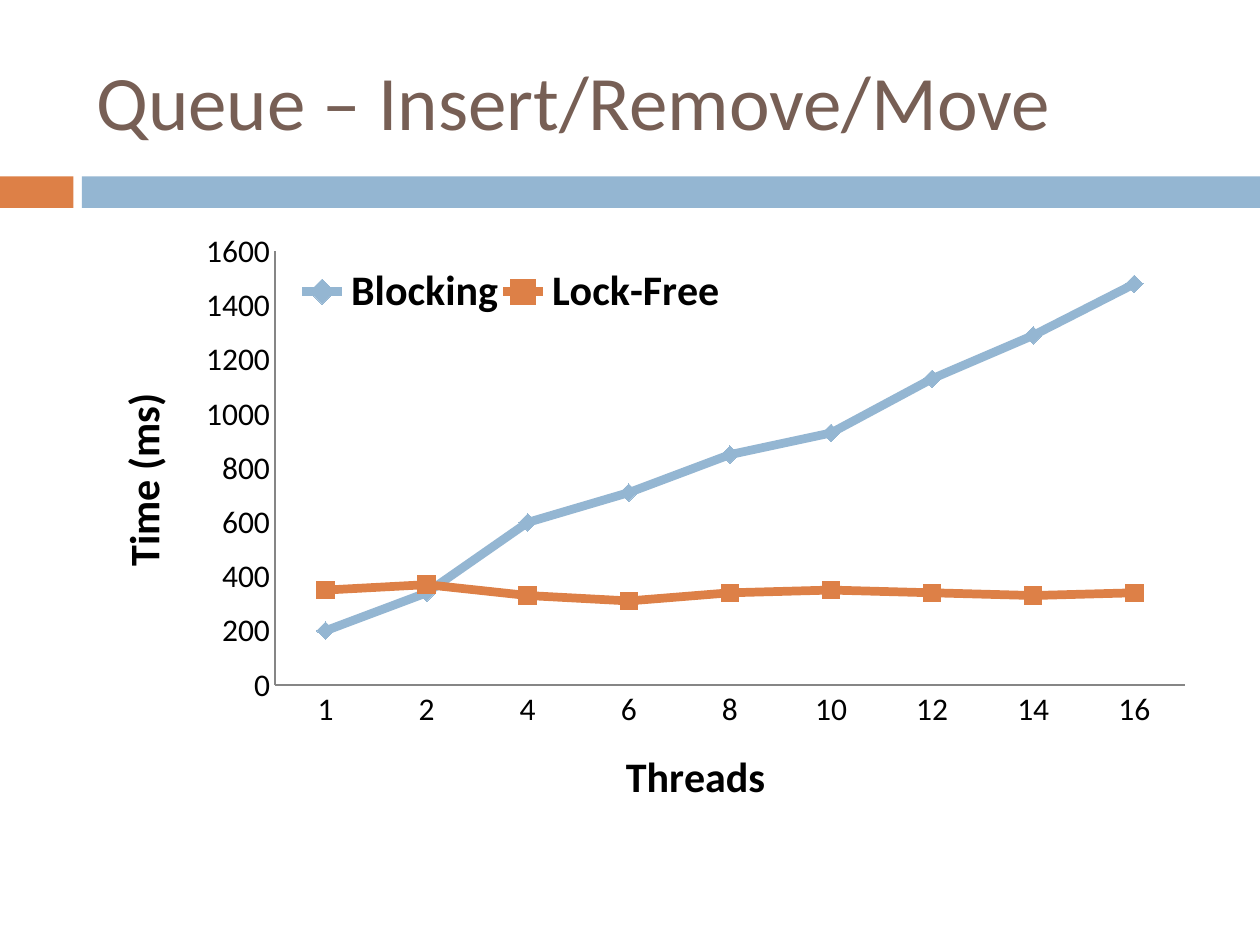
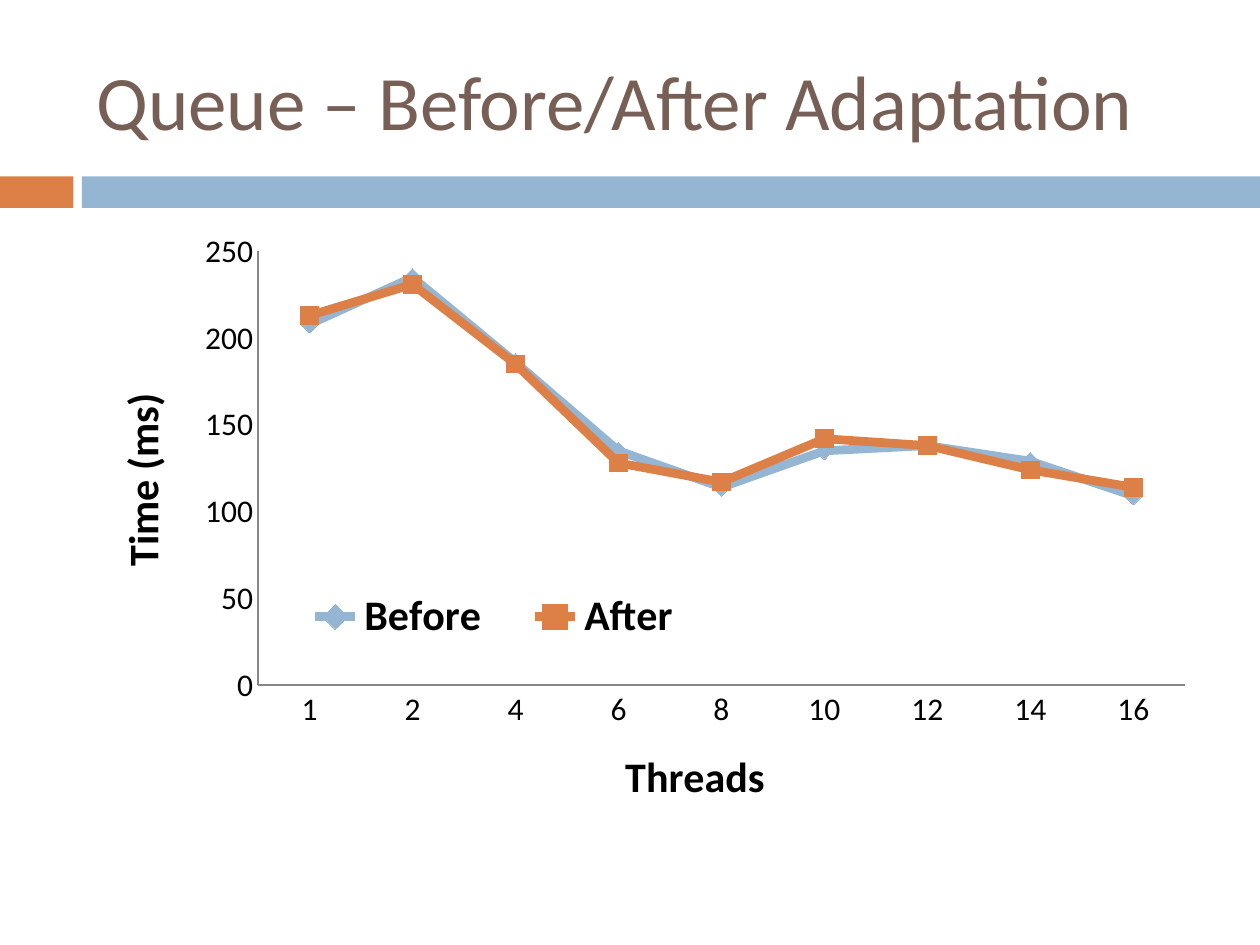
"""Build two slides of line charts that compare queue timings by thread count."""
from lxml import etree
from pptx import Presentation
from pptx.chart.data import CategoryChartData
from pptx.dml.color import RGBColor
from pptx.enum.chart import XL_CHART_TYPE, XL_LEGEND_POSITION, XL_MARKER_STYLE, XL_TICK_MARK
from pptx.enum.shapes import MSO_SHAPE
from pptx.enum.text import MSO_ANCHOR
from pptx.oxml.ns import qn
from pptx.util import Pt

LINE_MARKERS = XL_CHART_TYPE.LINE_MARKERS
LEGEND_RIGHT = XL_LEGEND_POSITION.RIGHT
DIAMOND, SQUARE = XL_MARKER_STYLE.DIAMOND, XL_MARKER_STYLE.SQUARE
NO_TICK = XL_TICK_MARK.NONE
RECTANGLE = MSO_SHAPE.RECTANGLE
MIDDLE = MSO_ANCHOR.MIDDLE

ORANGE = RGBColor(0xDD, 0x80, 0x47)
BLUE = RGBColor(0x94, 0xB6, 0xD2)
BROWN = RGBColor(0x77, 0x5F, 0x55)
BLACK = RGBColor(0, 0, 0)
GREY = RGBColor(0x86, 0x86, 0x86)

FONT = "Calibri"
TITLE_FORMAT = {"name": FONT, "size": Pt(44), "bold": False}
LABEL_FORMAT = {"name": FONT, "size": Pt(18), "bold": False}
HEADING_FORMAT = {"name": FONT, "size": Pt(24), "bold": True}
AXIS_FORMAT = {"major_tick_mark": NO_TICK, "minor_tick_mark": NO_TICK,
               "has_major_gridlines": False}
SERIES_LOOKS = [(BLUE, DIAMOND), (ORANGE, SQUARE)]

SLIDE_WIDTH, SLIDE_HEIGHT = 720, 540
TITLE_BOX = (48, 18, 642, 78)
BAND_BOX = (0, 100.8, SLIDE_WIDTH, 18)
CHART_BOX = (48, 126, 642, 354)

THREADS = ["1", "2", "4", "6", "8", "10", "12", "14", "16"]
SLIDES = [
    {
        "title": "Queue – Insert/Remove/Move",
        "timings": {
            "Blocking": [200, 340, 600, 710, 850, 930, 1130, 1290, 1480],
            "Lock-Free": [350, 370, 330, 310, 340, 350, 340, 330, 340],
        },
        "scale": (1600, 200),
        "plot": (0.17, 0.05, 0.81, 0.7),
        "legend": (0.19, 0.07, 0.38, 0.09),
    },
    {
        "title": "Queue – Before/After Adaptation",
        "timings": {
            "Before": [208, 235, 186, 135, 114, 135, 138, 129, 109],
            "After": [213, 231, 185, 128, 117, 142, 138, 124, 114],
        },
        "scale": (250, 50),
        "plot": (0.155, 0.05, 0.825, 0.7),
        "legend": (0.17, 0.59, 0.39, 0.1),
    },
]


def apply_format(target, values):
    """Set each attribute named in a dict of format values."""
    for name, value in values.items():
        setattr(target, name, value)


def apply_font(font, values, color=BLACK):
    """Set the format and colour of a font."""
    apply_format(font, values)
    font.color.rgb = color


def place_in_chart(element, index, fractions, inner=False):
    """Give a chart part a manual layout in fractions of the chart."""
    for old in element.findall(qn("c:layout")):
        element.remove(old)
    layout = etree.Element(qn("c:layout"))
    manual = etree.SubElement(layout, qn("c:manualLayout"))
    settings = [("layoutTarget", "inner")] if inner else []
    settings += [("xMode", "edge"), ("yMode", "edge")]
    settings += zip("xywh", map(str, fractions))
    for tag, value in settings:
        etree.SubElement(manual, qn(f"c:{tag}")).set("val", value)
    element.insert(index, layout)


def add_title(slide, box, text):
    """Write the slide title in its box."""
    frame = slide.shapes.add_textbox(*map(Pt, box)).text_frame
    apply_format(frame, {"word_wrap": True, "vertical_anchor": MIDDLE})
    run = frame.paragraphs[0].add_run()
    run.text = text
    apply_font(run.font, TITLE_FORMAT, BROWN)


def add_band(slide, box):
    """Draw the short orange and the long blue part of the band."""
    left, top, width, height = box
    accent, gap = 42, 4.8
    rest = accent + gap
    for offset, length, color in ((0, accent, ORANGE), (rest, width - rest, BLUE)):
        bar = slide.shapes.add_shape(
            RECTANGLE, Pt(left + offset), Pt(top), Pt(length), Pt(height))
        bar.shadow.inherit = False
        bar.fill.solid()
        bar.fill.fore_color.rgb = color
        bar.line.fill.background()


def style_axis(axis, heading):
    """Format an axis and write its heading."""
    apply_format(axis, AXIS_FORMAT)
    apply_font(axis.tick_labels.font, LABEL_FORMAT)
    axis.format.line.color.rgb = GREY
    axis.format.line.width = Pt(0.75)
    run = axis.axis_title.text_frame.paragraphs[0].add_run()
    run.text = heading
    apply_font(run.font, HEADING_FORMAT)


def style_series(series, color, marker_style):
    """Give a line and its markers one colour."""
    series.smooth = False
    series.format.line.color.rgb = color
    series.format.line.width = Pt(5)
    apply_format(series.marker, {"style": marker_style, "size": 10})
    look = series.marker.format
    look.fill.solid()
    look.fill.fore_color.rgb = color
    look.line.color.rgb = color


def add_timing_chart(slide, box, content):
    """Draw the time against threads as lines with a legend inside."""
    data = CategoryChartData()
    data.categories = THREADS
    for name, times in content["timings"].items():
        data.add_series(name, times)
    chart = slide.shapes.add_chart(LINE_MARKERS, *map(Pt, box), data).chart
    chart.has_title = False
    apply_font(chart.font, {"name": FONT, "size": Pt(10)})

    style_axis(chart.category_axis, "Threads")
    style_axis(chart.value_axis, "Time (ms)")
    maximum, step = content["scale"]
    apply_format(chart.value_axis, {
        "minimum_scale": 0, "maximum_scale": maximum, "major_unit": step})

    plot = chart.plots[0]
    plot.vary_by_categories = False
    for series, look in zip(plot.series, SERIES_LOOKS):
        style_series(series, *look)

    chart.has_legend = True
    legend = chart.legend
    apply_format(legend, {"position": LEGEND_RIGHT, "include_in_layout": True})
    apply_font(legend.font, HEADING_FORMAT)
    place_in_chart(legend._element, 1, content["legend"])
    plot_area = chart._chartSpace.chart.plotArea
    place_in_chart(plot_area, 0, content["plot"], inner=True)


def add_timing_slide(deck, content):
    """Add one slide with its band, title and chart."""
    slide = deck.slides.add_slide(deck.slide_layouts[6])
    add_band(slide, BAND_BOX)
    add_title(slide, TITLE_BOX, content["title"])
    add_timing_chart(slide, CHART_BOX, content)


def main():
    """Build and save the deck."""
    deck = Presentation()
    deck.slide_width, deck.slide_height = Pt(SLIDE_WIDTH), Pt(SLIDE_HEIGHT)
    for content in SLIDES:
        add_timing_slide(deck, content)
    deck.save("out.pptx")


if __name__ == "__main__":
    main()
